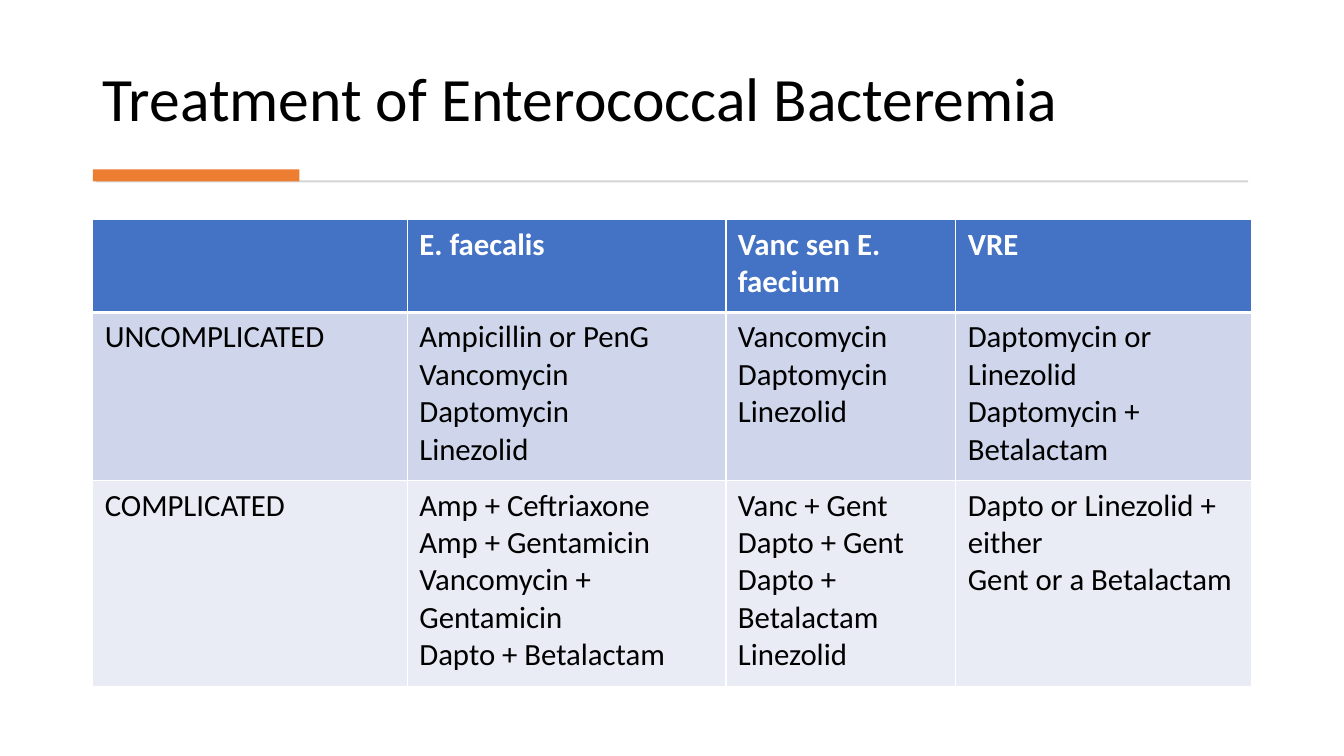
from dataclasses import dataclass

from lxml.etree import SubElement
from pptx import Presentation
from pptx.dml.color import RGBColor
from pptx.enum.shapes import MSO_SHAPE as Preset
from pptx.enum.text import MSO_ANCHOR as Anchor
from pptx.oxml.ns import qn
from pptx.util import Emu, Pt

EMU_PER_PX = 9144  # 100 px to the inch


@dataclass(frozen=True)
class Theme:
    font: str = "Calibri"
    title_size: int = 44
    cell_size: int = 22
    text: str = "000000"
    white: str = "FFFFFF"
    accent: str = "ED7D31"
    rule: str = "D5D5D5"
    header: str = "4472C4"
    band_dark: str = "CFD5EA"
    band_light: str = "E9EBF5"


@dataclass(frozen=True)
class Box:
    left: int
    top: int
    width: int
    height: int

    def emu(self) -> tuple[Emu, ...]:
        return tuple(px(v) for v in (self.left, self.top, self.width, self.height))


@dataclass(frozen=True)
class Bar:
    box: Box
    color: str


@dataclass(frozen=True)
class Row:
    height: int
    fill: str
    cells: tuple[str, ...]
    is_header: bool = False


THEME = Theme()
TITLE = "Treatment of Enterococcal Bacteremia"
TITLE_BOX = Box(92, 28, 1149, 111)
BARS = (
    Bar(Box(95, 179, 1143, 2), THEME.rule),
    Bar(Box(92, 168, 205, 12), THEME.accent),
)
TABLE_LEFT, TABLE_TOP = 92, 218
COLUMN_WIDTHS = (312, 316, 228, 293)
ROWS = (
    Row(92, THEME.header, ("", "E. faecalis", "Vanc sen E. faecium", "VRE"), True),
    Row(167, THEME.band_dark, (
        "UNCOMPLICATED",
        "Ampicillin or PenG\nVancomycin\nDaptomycin\nLinezolid",
        "Vancomycin\nDaptomycin\nLinezolid",
        "Daptomycin or Linezolid\nDaptomycin + Betalactam",
    )),
    Row(204, THEME.band_light, (
        "COMPLICATED",
        "Amp + Ceftriaxone\nAmp + Gentamicin\nVancomycin + Gentamicin\nDapto + Betalactam",
        "Vanc + Gent\nDapto + Gent\nDapto + Betalactam\nLinezolid",
        "Dapto or Linezolid + either\nGent or a Betalactam",
    )),
)


def px(value: int) -> Emu:
    return Emu(value * EMU_PER_PX)


def style_font(font, size: int, color: str, bold: bool = False) -> None:
    font.name = THEME.font
    font.size = Pt(size)
    font.bold = bold
    font.color.rgb = RGBColor.from_string(color)


def add_title(slide) -> None:
    frame = slide.shapes.add_textbox(*TITLE_BOX.emu()).text_frame
    frame.word_wrap = True
    frame.vertical_anchor = Anchor.BOTTOM
    frame.text = TITLE
    heading = frame.paragraphs[0]
    heading.line_spacing = 0.9
    style_font(heading.font, THEME.title_size, THEME.text)


def add_bar(slide, bar: Bar) -> None:
    strip = slide.shapes.add_shape(Preset.RECTANGLE, *bar.box.emu())
    strip.shadow.inherit = False
    strip.fill.solid()
    strip.fill.fore_color.rgb = RGBColor.from_string(bar.color)
    strip.line.fill.background()


def add_borders(cell, widths: dict[str, int]) -> None:
    properties = cell._tc.get_or_add_tcPr()
    for side, points in widths.items():
        border = SubElement(properties, qn(f"a:ln{side}"), w=str(Pt(points)))
        fill = SubElement(border, qn("a:solidFill"))
        SubElement(fill, qn("a:srgbClr"), val=THEME.white)


def fill_cell(cell, text: str, row: Row, widths: dict[str, int]) -> None:
    cell.margin_left = cell.margin_right = px(12)
    cell.margin_top = cell.margin_bottom = px(6)
    add_borders(cell, widths)
    cell.fill.solid()
    cell.fill.fore_color.rgb = RGBColor.from_string(row.fill)
    cell.text = text
    color = THEME.white if row.is_header else THEME.text
    for paragraph in cell.text_frame.paragraphs:
        style_font(paragraph.font, THEME.cell_size, color, row.is_header)


def add_treatments(slide) -> None:
    box = Box(TABLE_LEFT, TABLE_TOP, sum(COLUMN_WIDTHS), sum(r.height for r in ROWS))
    treatments = slide.shapes.add_table(len(ROWS), len(COLUMN_WIDTHS), *box.emu()).table
    for column, width in zip(treatments.columns, COLUMN_WIDTHS):
        column.width = px(width)
    for r, row in enumerate(ROWS):
        treatments.rows[r].height = px(row.height)
        # The heavy line runs between the header and the first body row
        top = 3 if r and ROWS[r - 1].is_header else 1
        bottom = 3 if row.is_header else 1
        widths = {"L": 1, "R": 1, "T": top, "B": bottom}
        for c, text in enumerate(row.cells):
            fill_cell(treatments.cell(r, c), text, row, widths)


def main() -> None:
    deck = Presentation()
    deck.slide_width, deck.slide_height = px(1333), px(750)
    slide = deck.slides.add_slide(deck.slide_layouts[6])

    # Heading and the rule below it
    add_title(slide)
    for bar in BARS:
        add_bar(slide, bar)

    # Treatment options by organism and severity
    add_treatments(slide)

    deck.save("out.pptx")


if __name__ == "__main__":
    main()
